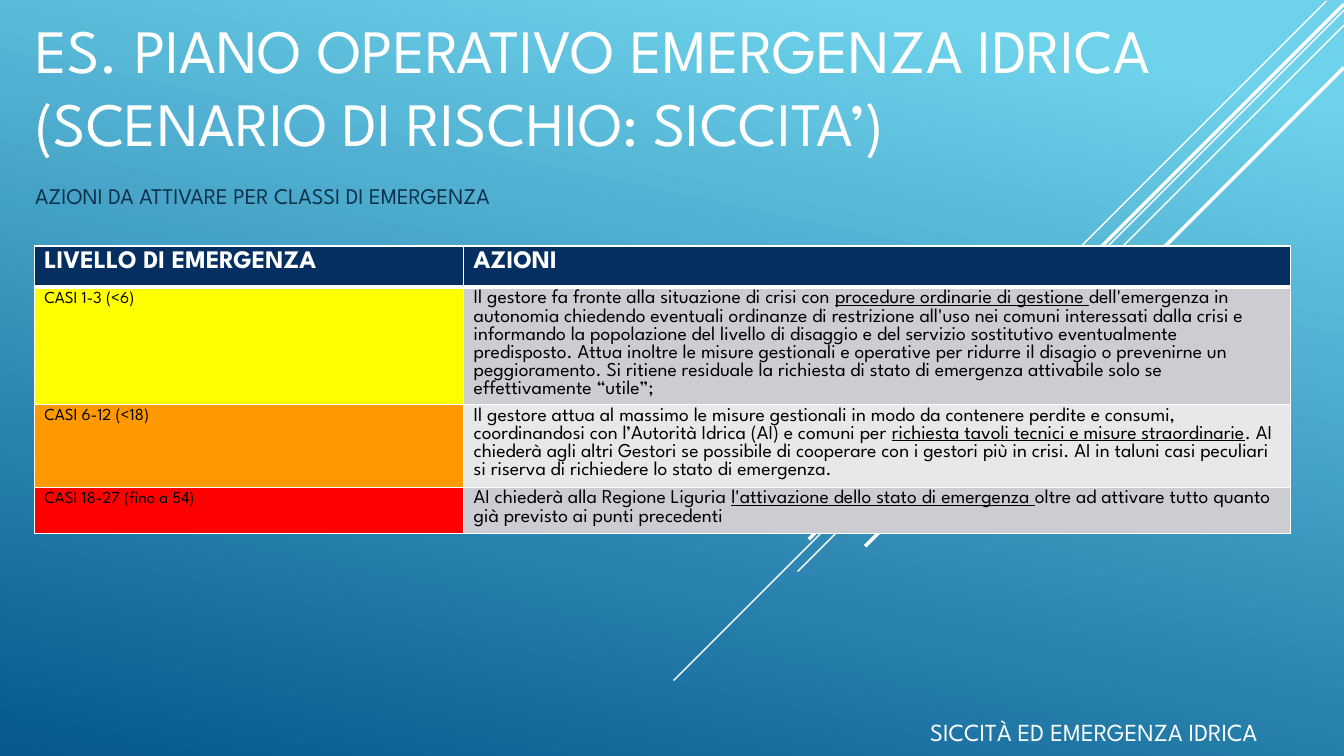
from typing import NamedTuple

import lxml.etree
import pptx
import pptx.dml.color
import pptx.enum.dml
import pptx.enum.shapes
import pptx.enum.text
import pptx.oxml
import pptx.oxml.ns
import pptx.util

Pt = pptx.util.Pt
FONT = "League Spartan"
COLORS = {
    "white": "FFFFFF", "black": "000000", "sky": "6ED2EB", "deep": "06588E",
    "subtitle": "0A304A", "header": "052F61", "yellow": "FFFF00",
    "orange": "FF9900", "red": "FF0000", "band": "CCCDD2", "light_band": "E7E8EA",
}


class Ray(NamedTuple):
    """A 45-degree line running down and left from (x, y)."""
    x: float
    y: float
    run: float
    weight: float


class Level(NamedTuple):
    name: str
    color: str
    band: str
    height: float
    before: str
    underlined: str
    after: str


RAYS = [
    Ray(947.5, 0.7, 299.5, 1),
    Ray(960, 7.2, 478.8, 1),
    Ray(960, 18, 390.2, 1),
    Ray(960, 2.9, 382.3, 2.5),
    Ray(960, 48.2, 342, 2.5),
]
HEADERS = ["LIVELLO DI EMERGENZA", "AZIONI"]
HEADER_HEIGHT = 29.5
COLUMN_WIDTHS = [306.7, 590.4]
LEVELS = [
    Level("CASI 1-3 (<6)", "yellow", "band", 83.6,
          "Il gestore fa fronte alla situazione di crisi con ",
          "procedure ordinarie di gestione ",
          "dell'emergenza in autonomia chiedendo eventuali ordinanze di restrizione "
          "all'uso nei comuni interessati dalla crisi e informando la popolazione del "
          "livello di disaggio e del servizio sostitutivo eventualmente predisposto. "
          "Attua inoltre le misure gestionali e operative per ridurre il disagio o "
          "prevenirne un peggioramento. Si ritiene residuale la richiesta di stato di "
          "emergenza attivabile solo se effettivamente “utile”;"),
    Level("CASI 6-12 (<18)", "orange", "light_band", 59.2,
          "Il gestore attua al massimo le misure gestionali in modo da contenere perdite "
          "e consumi, coordinandosi con l’Autorità Idrica (AI) e comuni per ",
          "richiesta tavoli tecnici e misure straordinarie",
          ". AI chiederà agli altri Gestori se possibile di cooperare con i gestori più "
          "in crisi. AI in taluni casi peculiari si riserva di richiedere lo stato di "
          "emergenza."),
    Level("CASI 18-27 (fino a 54)", "red", "band", 33,
          "AI chiederà alla Regione Liguria ",
          "l'attivazione dello stato di emergenza ",
          "oltre ad attivare tutto quanto già previsto ai punti precedenti"),
]


def rgb(name: str) -> pptx.dml.color.RGBColor:
    return pptx.dml.color.RGBColor.from_string(COLORS[name])


def format_runs(tf, size: float, color: str, bold: bool = False) -> None:
    for p in tf.paragraphs:
        for r in p.runs:
            r.font.name = FONT
            r.font.size = Pt(size)
            r.font.bold = bold
            r.font.color.rgb = rgb(color)


def place(sp, left: float, top: float, width: float, height: float) -> None:
    sp.left, sp.top, sp.width, sp.height = map(Pt, (left, top, width, height))


def fill_background(s) -> None:
    fill = s.background.fill
    fill.gradient()
    fill.gradient_angle = 258
    for stop, color, position in zip(fill.gradient_stops, ("sky", "deep"), (0.1, 1)):
        stop.color.rgb = rgb(color)
        stop.position = position


def add_ray(s, ray: Ray) -> None:
    line = s.shapes.add_connector(
        pptx.enum.shapes.MSO_CONNECTOR.STRAIGHT,
        Pt(ray.x), Pt(ray.y), Pt(ray.x - ray.run), Pt(ray.y + ray.run))
    line.line.color.rgb = rgb("white")
    line.line.width = Pt(ray.weight)
    lxml.etree.SubElement(line._element.spPr, pptx.oxml.ns.qn("a:effectLst"))


def add_title(s) -> None:
    sp = s.shapes.title
    place(sp, 18, 36, 903.6, 81.4)
    tf = sp.text_frame
    tf.text = "ES. PIANO OPERATIVO EMERGENZA IDRICA (SCENARIO DI RISCHIO: SICCITA’)"
    tf.auto_size = pptx.enum.text.MSO_AUTO_SIZE.NONE
    tf.vertical_anchor = pptx.enum.text.MSO_ANCHOR.BOTTOM
    tf.paragraphs[0].alignment = pptx.enum.text.PP_ALIGN.LEFT
    format_runs(tf, 44, "white")


def add_text(s, text: str, box: tuple, size: float, color: str):
    tf = s.shapes.add_textbox(*map(Pt, box)).text_frame
    tf.word_wrap = True
    tf.text = text
    format_runs(tf, size, color)
    return tf


def style_cell(cell, fill: str, bottom: float = 1, top: float = 1) -> None:
    """Fill the cell and give it white borders."""
    cell.fill.solid()
    cell.fill.fore_color.rgb = rgb(fill)
    tc_pr = cell._tc.get_or_add_tcPr()
    sides = [("lnL", 1), ("lnR", 1), ("lnT", top), ("lnB", bottom)]
    for i, (side, weight) in enumerate(sides):
        tc_pr.insert(i, pptx.oxml.parse_xml(
            f'<a:{side} {pptx.oxml.ns.nsdecls("a")} w="{Pt(weight)}"><a:solidFill>'
            f'<a:srgbClr val="{COLORS["white"]}"/></a:solidFill></a:{side}>'))


def add_levels_table(s) -> None:
    heights = [HEADER_HEIGHT] + [level.height for level in LEVELS]
    table = s.shapes.add_table(
        len(heights), len(HEADERS), Pt(24.5), Pt(175.7),
        Pt(sum(COLUMN_WIDTHS)), Pt(sum(heights))).table
    table.horz_banding = False
    for column, width in zip(table.columns, COLUMN_WIDTHS):
        column.width = Pt(width)
    for row, height in zip(table.rows, heights):
        row.height = Pt(height)

    for cell, header in zip(table.rows[0].cells, HEADERS):
        cell.text_frame.text = header
        format_runs(cell.text_frame, 18, "white", bold=True)
        style_cell(cell, "header", bottom=3)

    for i, level in enumerate(LEVELS, start=1):
        name, actions = table.rows[i].cells
        top = 3 if i == 1 else 1
        name.text_frame.text = level.name
        name.margin_top = Pt(2.9)
        format_runs(name.text_frame, 12, "black")
        style_cell(name, level.color, top=top)
        p = actions.text_frame.paragraphs[0]
        p.line_spacing = Pt(13)
        actions.margin_top = Pt(2)
        for text in (level.before, level.underlined, level.after):
            r = p.add_run()
            r.text = text
            r.font.underline = text == level.underlined
        format_runs(actions.text_frame, 14, "black")
        style_cell(actions, level.band, top=top)


def main() -> None:
    prs = pptx.Presentation()
    prs.slide_width, prs.slide_height = Pt(960), Pt(540)
    s = prs.slides.add_slide(prs.slide_layouts[5])
    fill_background(s)
    for ray in RAYS:
        add_ray(s, ray)
    add_title(s)
    footer = add_text(s, "SICCITÀ ED EMERGENZA IDRICA",
                      (657.4, 501.1, 302.4, 35.3), 17.5, "white")
    footer.vertical_anchor = pptx.enum.text.MSO_ANCHOR.BOTTOM
    add_text(s, "AZIONI DA ATTIVARE PER CLASSI DI EMERGENZA",
             (18, 126.7, 920.9, 130.3), 16, "subtitle")
    add_levels_table(s)
    prs.save("out.pptx")


if __name__ == "__main__":
    main()
